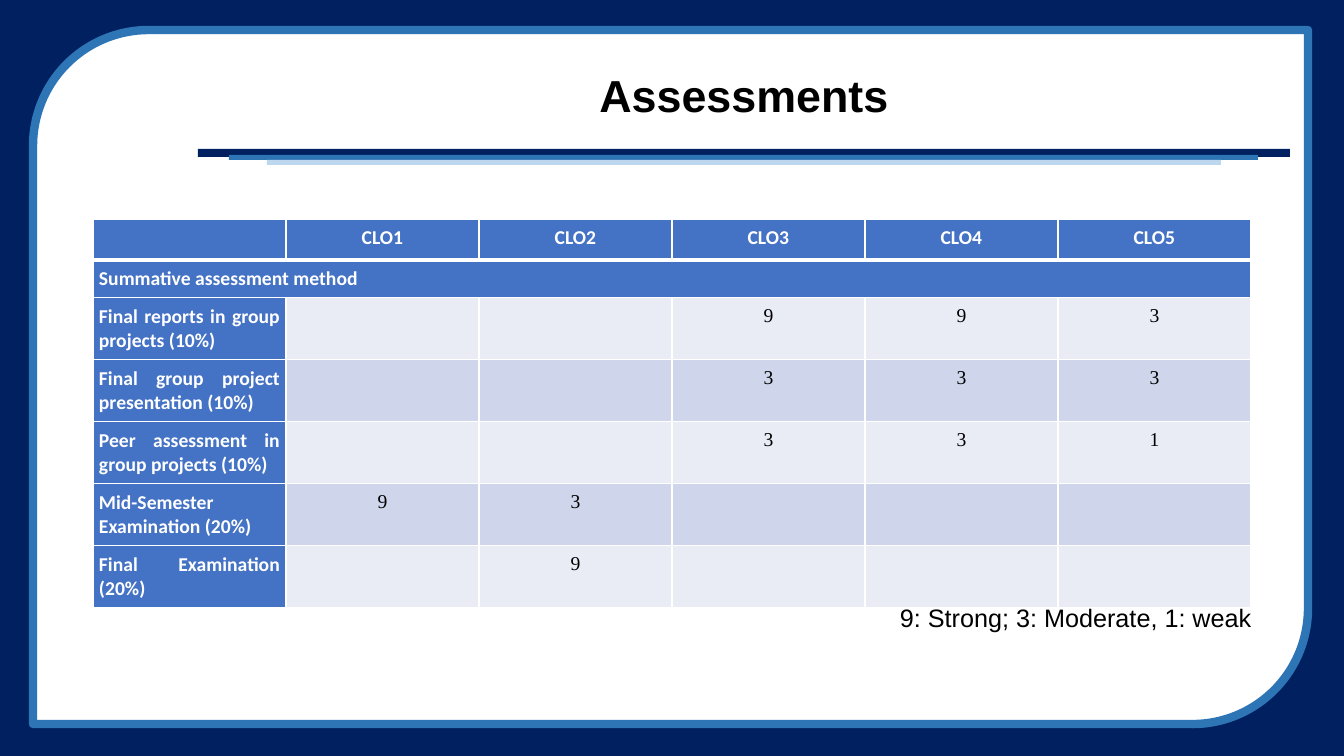
"""Build the Assessments slide: framed page, ruled title and outcome table."""
from dataclasses import dataclass

from lxml import etree
from pptx import Presentation
from pptx import util as u
from pptx.dml.color import RGBColor
from pptx.enum import shapes, text
from pptx.oxml import ns

EMU_PER_PX = 12192000 / 1344
NAVY = RGBColor(0x00, 0x20, 0x60)
BLUE = RGBColor(0x2E, 0x75, 0xB6)
PALE_BLUE = RGBColor(0xBD, 0xD7, 0xEE)
HEADER_BLUE = RGBColor(0x44, 0x72, 0xC4)
BAND_LIGHT = RGBColor(0xE9, 0xEB, 0xF5)
BAND_DARK = RGBColor(0xCF, 0xD5, 0xEA)
WHITE = RGBColor(0xFF, 0xFF, 0xFF)
BLACK = RGBColor(0x00, 0x00, 0x00)

OUTCOMES = ["", "CLO1", "CLO2", "CLO3", "CLO4", "CLO5"]
SECTION = "Summative assessment method"
COLUMN_WIDTH = 193
HEADING_HEIGHT, METHOD_HEIGHT = 37, 62


@dataclass(frozen=True)
class Area:
    left: int
    top: int
    width: int
    height: int


@dataclass(frozen=True)
class Block:
    area: Area
    fill: RGBColor


@dataclass(frozen=True)
class Style:
    font: str
    size: int
    color: RGBColor
    bold: bool = False


@dataclass(frozen=True)
class Method:
    name: str
    scores: tuple[str, ...]


BACKDROP = Block(Area(0, 0, 1344, 756), NAVY)
FRAME = Block(Area(33, 30, 1275, 694), WHITE)
RULES = [
    Block(Area(198, 149, 1092, 8), NAVY),
    Block(Area(229, 155, 1029, 5), BLUE),
    Block(Area(267, 160, 954, 5), PALE_BLUE),
]
METHODS = [
    Method("Final reports in group projects (10%)", ("", "", "9", "9", "3")),
    Method("Final group project presentation (10%)", ("", "", "3", "3", "3")),
    Method("Peer assessment in group projects (10%)", ("", "", "3", "3", "1")),
    Method("Mid-Semester Examination (20%)", ("9", "3", "", "", "")),
    Method("Final Examination (20%)", ("", "9", "", "", "")),
]
TITLE_STYLE = Style("Arial", 32, BLACK, True)
LEGEND_STYLE = Style("Arial", 18, BLACK)
HEADING_STYLE = Style("Calibri", 14, WHITE, True)
SCORE_STYLE = Style("Times New Roman", 14, BLACK)


def px(length: int) -> u.Emu:
    """Turn pixels into EMU."""
    return u.Emu(round(length * EMU_PER_PX))


def place(area: Area) -> tuple[u.Emu, ...]:
    """Give an area's left, top, width and height in EMU."""
    return px(area.left), px(area.top), px(area.width), px(area.height)


def add_span(para, words: str, style: Style) -> None:
    """Add one formatted run to a paragraph."""
    span = para.add_run()
    span.text = words
    span.font.name = style.font
    span.font.size = u.Pt(style.size)
    span.font.bold = style.bold
    span.font.color.rgb = style.color


def add_block(page, block: Block, kind=shapes.MSO_SHAPE.RECTANGLE):
    """Draw a filled shape without outline or shadow."""
    shape = page.shapes.add_shape(kind, *place(block.area))
    shape.shadow.inherit = False
    shape.fill.solid()
    shape.fill.fore_color.rgb = block.fill
    shape.line.fill.background()
    return shape


def add_frame(page) -> None:
    """Draw the white panel with two rounded corners."""
    frame = add_block(page, FRAME, shapes.MSO_SHAPE.ROUND_2_DIAG_RECTANGLE)
    frame.rotation = 180
    frame.line.color.rgb = BLUE
    frame.line.width = u.Pt(6)


def set_title(page) -> None:
    """Place the title above the frame and fill it."""
    title = page.shapes.title
    title.element.getparent().append(title.element)
    title.left, title.top, title.width, title.height = place(Area(198, 49, 1092, 98))
    title.text_frame.vertical_anchor = text.MSO_ANCHOR.MIDDLE
    para = title.text_frame.paragraphs[0]
    para.alignment = text.PP_ALIGN.CENTER
    para.line_spacing = 0.9
    add_span(para, "Assessments", TITLE_STYLE)


def add_legend(page) -> None:
    """Write the key to the scores."""
    box = page.shapes.add_textbox(*place(Area(890, 597, 500, 40)))
    box.text_frame.word_wrap = True
    box.text_frame.auto_size = text.MSO_AUTO_SIZE.SHAPE_TO_FIT_TEXT
    box.text_frame.vertical_anchor = text.MSO_ANCHOR.MIDDLE
    add_span(box.text_frame.paragraphs[0], "9: Strong; 3: Moderate, 1: weak", LEGEND_STYLE)


def set_borders(cell, top: int = 1, bottom: int = 1) -> None:
    """Give a cell white borders with widths in points."""
    properties = cell._tc.get_or_add_tcPr()
    widths = {"a:lnL": 1, "a:lnR": 1, "a:lnT": top, "a:lnB": bottom}
    for index, (side, width) in enumerate(widths.items()):
        line = etree.Element(ns.qn(side), w=str(u.Pt(width)))
        fill = etree.SubElement(line, ns.qn("a:solidFill"))
        etree.SubElement(fill, ns.qn("a:srgbClr"), val=str(WHITE))
        properties.insert(index, line)


def fill_cell(cell, words: str, fill: RGBColor, style: Style, alignment) -> None:
    """Colour a cell and write its words, if any."""
    cell.fill.solid()
    cell.fill.fore_color.rgb = fill
    if words:
        cell.margin_left = cell.margin_right = px(6)
        cell.margin_top = cell.margin_bottom = px(7)
        para = cell.text_frame.paragraphs[0]
        para.alignment = alignment
        para.space_after = u.Pt(1)
        add_span(para, words, style)


def add_assessment_table(page) -> None:
    """Draw the table of assessment methods against outcomes."""
    heights = [HEADING_HEIGHT] * 2 + [METHOD_HEIGHT] * len(METHODS)
    area = Area(93, 219, COLUMN_WIDTH * len(OUTCOMES), sum(heights))
    table = page.shapes.add_table(len(heights), len(OUTCOMES), *place(area)).table
    for column in table.columns:
        column.width = px(COLUMN_WIDTH)
    for row, height in zip(table.rows, heights):
        row.height = px(height)

    center, justify = text.PP_ALIGN.CENTER, text.PP_ALIGN.JUSTIFY
    for column, outcome in enumerate(OUTCOMES):
        fill_cell(table.cell(0, column), outcome, HEADER_BLUE, HEADING_STYLE, center)
        set_borders(table.cell(0, column), bottom=3)
        set_borders(table.cell(1, column), top=3)
    table.cell(1, 0).merge(table.cell(1, len(OUTCOMES) - 1))
    fill_cell(table.cell(1, 0), SECTION, HEADER_BLUE, HEADING_STYLE, justify)
    for row, method in enumerate(METHODS, start=2):
        band = BAND_DARK if row % 2 else BAND_LIGHT
        fill_cell(table.cell(row, 0), method.name, HEADER_BLUE, HEADING_STYLE, justify)
        set_borders(table.cell(row, 0))
        for column, score in enumerate(method.scores, start=1):
            fill_cell(table.cell(row, column), score, band, SCORE_STYLE, center)
            set_borders(table.cell(row, column))


def main() -> None:
    """Build and save the deck."""
    deck = Presentation()
    deck.slide_width, deck.slide_height = px(1344), px(756)
    page = deck.slides.add_slide(deck.slide_layouts[5])
    add_block(page, BACKDROP)
    add_frame(page)
    for rule in RULES:
        add_block(page, rule)
    add_legend(page)
    set_title(page)
    add_assessment_table(page)
    deck.save("out.pptx")


if __name__ == "__main__":
    main()
